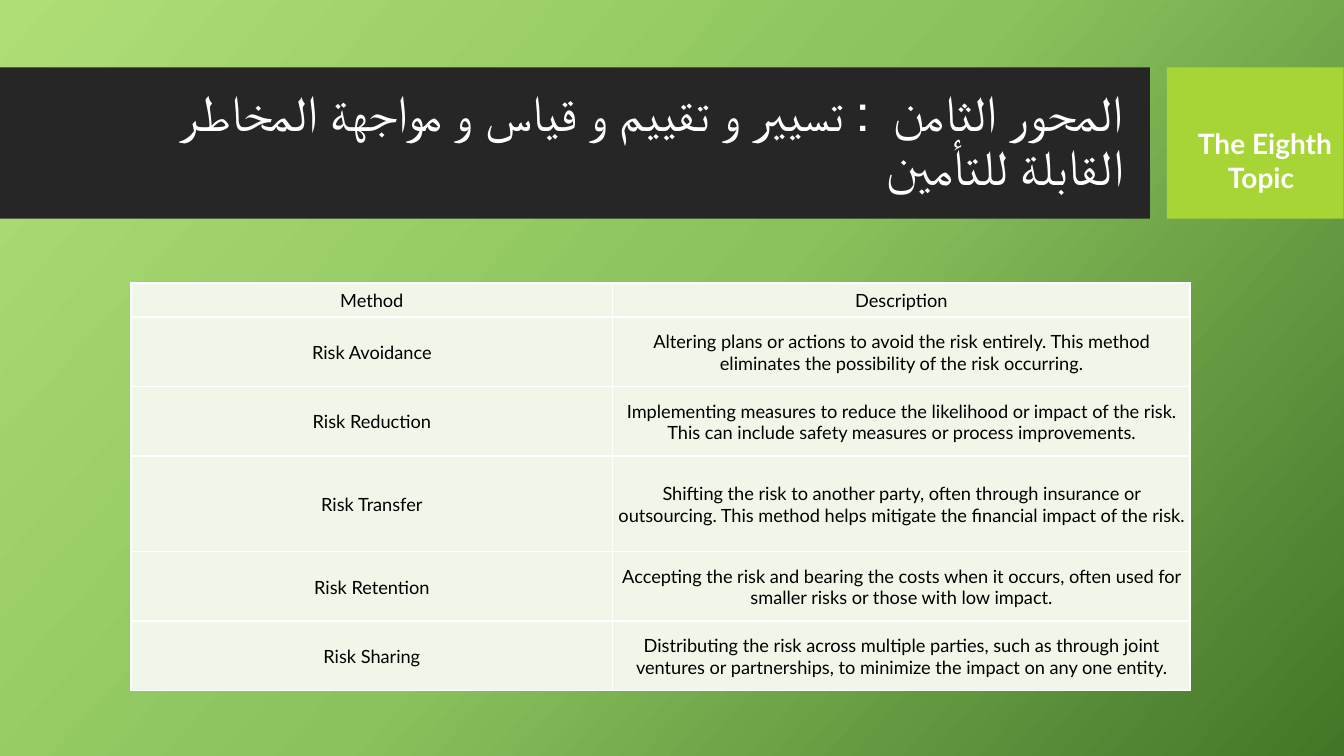
from copy import deepcopy
from dataclasses import dataclass

from lxml.etree import SubElement
from pptx import Presentation
from pptx.dml.color import RGBColor
from pptx.enum.shapes import MSO_SHAPE
from pptx.enum.text import MSO_ANCHOR as ANCHOR, MSO_AUTO_SIZE as AUTO, PP_ALIGN as ALIGN
from pptx.oxml.ns import qn
from pptx.util import Cm, Pt

COLORS = {
    "band": "262626", "accent": "A7D535", "cell": "F1F7E8", "light": "FFFFFF", "dark": "000000",
    "bg_start": "AFDE77", "bg_middle": "8BC25D", "bg_end": "437528",
}
FONT = "Lato"


@dataclass
class Box:
    left: float
    top: float
    width: float
    height: float

    def lengths(self) -> list:
        return [Cm(v) for v in (self.left, self.top, self.width, self.height)]


@dataclass
class Bar:
    box: Box
    color: str


@dataclass
class Label:
    box: Box
    lines: list[str]
    size: int
    align: ALIGN
    frame: dict
    bold: bool = False
    line_spacing: float = 1.0


BARS = [
    Bar(Box(0, 1.7, 28.98, 3.81), "band"),
    Bar(Box(29.41, 1.7, 4.45, 3.81), "accent"),
]
LABELS = [
    Label(Box(1.88, 2.08, 26.7, 3),
          ["المحور الثامن  : تسيير و تقييم و قياس و مواجهة المخاطر القابلة للتأمين "],
          36, ALIGN.RIGHT, {"word_wrap": True, "vertical_anchor": ANCHOR.MIDDLE},
          line_spacing=0.9),
    Label(Box(29.62, 3.07, 4.32, 1.96), ["The Eighth ", "Topic"],
          20, ALIGN.CENTER, {"word_wrap": False, "auto_size": AUTO.SHAPE_TO_FIT_TEXT},
          bold=True),
]

TABLE_BOX = Box(3.3, 7.13, 26.69, 10.27)
COL_WIDTHS = [12.14, 14.55]
ROW_HEIGHTS = [0.86, 1.75, 1.75, 2.41, 1.75, 1.75]
ROWS = [
    ("Method", "Description"),
    ("Risk Avoidance", "Altering plans or actions to avoid the risk entirely. "
     "This method eliminates the possibility of the risk occurring."),
    ("Risk Reduction", "Implementing measures to reduce the likelihood or impact of the risk. "
     "This can include safety measures or process improvements."),
    ("Risk Transfer", "Shifting the risk to another party, often through insurance or outsourcing. "
     "This method helps mitigate the financial impact of the risk."),
    ("Risk Retention", "Accepting the risk and bearing the costs when it occurs, "
     "often used for smaller risks or those with low impact."),
    ("Risk Sharing", "Distributing the risk across multiple parties, such as through joint "
     "ventures or partnerships, to minimize the impact on any one entity."),
]
CELL_FORMAT = {
    "vertical_anchor": ANCHOR.MIDDLE, "margin_left": Cm(0.03), "margin_right": Cm(0.03),
    "margin_top": Cm(0.03), "margin_bottom": 0,
}


def rgb(name: str) -> RGBColor:
    return RGBColor.from_string(COLORS[name])


def set_attrs(obj, values: dict) -> None:
    for name, value in values.items():
        setattr(obj, name, value)


def write(p, text: str, size: int, color: str, align: ALIGN, bold: bool = False) -> None:
    p.alignment = align
    r = p.add_run()
    r.text = text
    set_attrs(r.font, {"name": FONT, "size": Pt(size), "bold": bold})
    r.font.color.rgb = rgb(color)


def paint_background(s) -> None:
    fill = s.background.fill
    fill.gradient()
    fill.gradient_angle = 360 - 42
    stops = s.background._cSld.find(".//" + qn("a:gsLst"))
    stops.insert(1, deepcopy(stops[0]))
    for i, (stop, name) in enumerate(zip(fill.gradient_stops, ("bg_start", "bg_middle", "bg_end"))):
        stop.position = i / 2
        stop.color.rgb = rgb(name)


def add_bar(s, bar: Bar) -> None:
    sp = s.shapes.add_shape(MSO_SHAPE.RECTANGLE, *bar.box.lengths())
    sp.shadow.inherit = False
    sp.fill.solid()
    sp.fill.fore_color.rgb = rgb(bar.color)
    sp.line.fill.background()


def add_label(s, label: Label) -> None:
    tf = s.shapes.add_textbox(*label.box.lengths()).text_frame
    set_attrs(tf, label.frame)
    for i, line in enumerate(label.lines):
        p = tf.add_paragraph() if i else tf.paragraphs[0]
        write(p, line, label.size, "light", label.align, label.bold)
        p.line_spacing = label.line_spacing
        p._p.get_or_add_pPr().set("rtl", "1")


def format_cell(cell, text: str) -> None:
    set_attrs(cell, CELL_FORMAT)
    write(cell.text_frame.paragraphs[0], text, 13, "dark", ALIGN.CENTER)
    # Borders come before the fill in the cell properties
    tc_pr = cell._tc.get_or_add_tcPr()
    for side in ("a:lnL", "a:lnR", "a:lnT", "a:lnB"):
        ln = SubElement(tc_pr, qn(side), w=str(Pt(1)))
        SubElement(SubElement(ln, qn("a:solidFill")), qn("a:srgbClr"), val=COLORS["light"])
    cell.fill.solid()
    cell.fill.fore_color.rgb = rgb("cell")


def add_risk_table(s) -> None:
    table = s.shapes.add_table(len(ROWS), len(COL_WIDTHS), *TABLE_BOX.lengths()).table
    set_attrs(table, {"first_row": False, "horz_banding": False})
    for col, width in zip(table.columns, COL_WIDTHS):
        col.width = Cm(width)
    for row, height, texts in zip(table.rows, ROW_HEIGHTS, ROWS):
        row.height = Cm(height)
        for cell, text in zip(row.cells, texts):
            format_cell(cell, text)


def main() -> None:
    prs = Presentation()
    set_attrs(prs, {"slide_width": Cm(33.87), "slide_height": Cm(19.05)})
    s = prs.slides.add_slide(prs.slide_layouts[6])
    paint_background(s)

    # Header bars with the title and topic number
    for bar in BARS:
        add_bar(s, bar)
    for label in LABELS:
        add_label(s, label)

    # Risk methods
    add_risk_table(s)
    prs.save("out.pptx")


if __name__ == "__main__":
    main()
